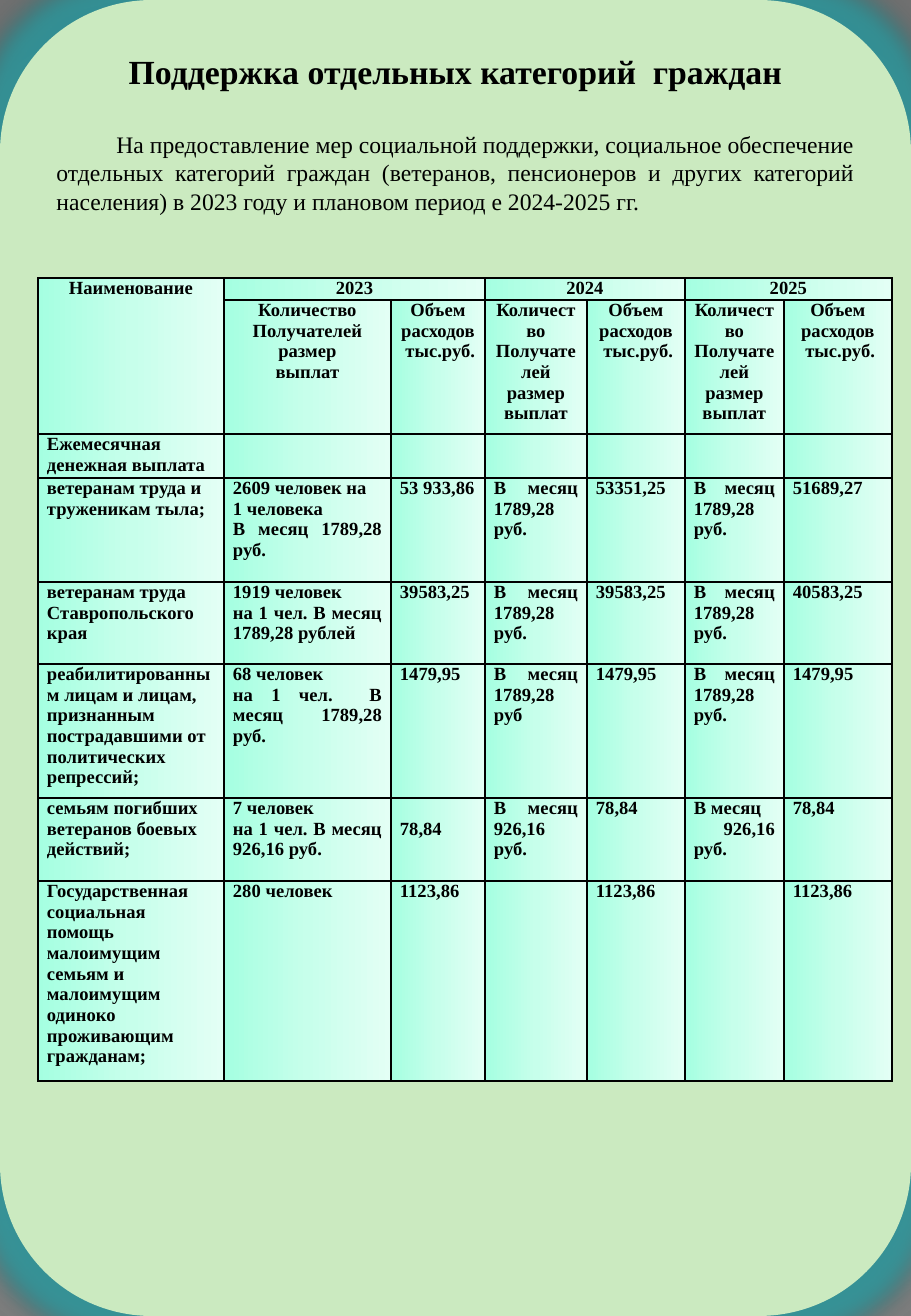
"""Build the slide on support for separate categories of citizens."""
from lxml import etree
from pptx import Presentation, util as u
from pptx.dml.color import RGBColor
from pptx.enum import shapes, text
from pptx.oxml import ns

TITLE = "Поддержка отдельных категорий  граждан"
INTRO = ("На предоставление мер социальной поддержки, социальное обеспечение "
         "отдельных категорий граждан (ветеранов, пенсионеров и других категорий "
         "населения) в 2023 году и плановом период е 2024-2025 гг.")
YEARS = ["2023", "2024", "2025"]
COUNT = "Количество\nПолучателей\nразмер\nвыплат"
VOLUME = "Объем\nрасходов\n тыс.руб."
MONTHLY = "В месяц 1789,28 руб."
BODY = [
    ["Ежемесячная денежная выплата", "", "", "", "", "", ""],
    ["ветеранам труда и труженикам тыла;",
     "2609 человек на\n1 человека\nВ месяц 1789,28 руб.",
     "53 933,86", MONTHLY, "53351,25", MONTHLY, "51689,27"],
    ["ветеранам труда Ставропольского края",
     "1919 человек\nна 1 чел. В месяц 1789,28 рублей",
     "39583,25", MONTHLY, "39583,25", MONTHLY, "40583,25"],
    ["реабилитированным лицам и лицам, признанным пострадавшими от "
     "политических репрессий;",
     "68 человек\nна 1 чел.  В месяц 1789,28 руб.",
     "1479,95", "В месяц 1789,28 руб", "1479,95", MONTHLY, "1479,95"],
    ["семьям погибших ветеранов боевых действий;",
     "7 человек\nна 1 чел. В месяц 926,16 руб.",
     "78,84", "В месяц 926,16 руб.", "78,84", "В месяц\n 926,16 руб.", "78,84"],
    ["Государственная социальная помощь малоимущим семьям и малоимущим "
     "одиноко проживающим гражданам;",
     "280 человек", "1123,86", "", "1123,86", "", "1123,86"],
]
HEAD = [["Наименование"] + [t for year in YEARS for t in (year, "")],
        [""] + [COUNT, VOLUME] * len(YEARS)]
ROWS = HEAD + BODY
COL_W = [186, 167, 94, 102, 98, 99, 108]
ROW_H = [22, 134, 44, 104, 82, 134, 83, 200]
WIDTH, HEIGHT = 911, 1316
TABLE_X, TABLE_Y = 38, 278
LOWERED_CELL, LINE_H = (6, 2), 21
MINT = [(0, "A5FFE1"), (50, "C7FFEB"), (100, "E3FFF5")]
GRAY = [(0, "FFFFFF"), (25, "FFFFFF"), (100, "707070")]
FONT, BLACK = "Times New Roman", "000000"
ALIGN = text.PP_ALIGN


def px(n):
    return u.Emu(round(n * 914400 / 121.5))


def rgb(value):
    return RGBColor.from_string(value)


def add_xml(parent, body):
    """Append a DrawingML fragment to an element."""
    tag, rest = body[1:].split(" ", 1)
    parent.append(etree.fromstring(f'<{tag} xmlns:a="{ns.nsuri("a")}" {rest}'))


def grad_xml(stops, direction):
    """Return a gradient fill with its stops and direction."""
    gs = "".join(f'<a:gs pos="{pos * 1000}"><a:srgbClr val="{c}"/></a:gs>' for pos, c in stops)
    return f'<a:gradFill rotWithShape="1"><a:gsLst>{gs}</a:gsLst>{direction}</a:gradFill>'


def write(p, words, size, bold, align):
    """Fill one paragraph with a formatted run."""
    p.alignment = align
    r = p.add_run()
    r.text = words
    for name, value in {"name": FONT, "size": u.Pt(size), "bold": bold}.items():
        setattr(r.font, name, value)
    r.font.color.rgb = rgb(BLACK)


def add_background(s):
    s.background.fill.gradient()
    bg_pr = s.background.fill._xPr
    old = bg_pr.find(ns.qn("a:gradFill"))
    add_xml(bg_pr, grad_xml(GRAY, '<a:path path="circle"><a:fillToRect l="10000" t="110000" '
                                  'r="10000" b="100000"/></a:path>'))
    bg_pr.replace(old, bg_pr[-1])


def add_panel(s):
    """Draw the rounded panel with the title and the introduction."""
    sp = s.shapes.add_shape(shapes.MSO_SHAPE.ROUNDED_RECTANGLE, 0, 0, px(WIDTH), px(HEIGHT))
    sp.fill.solid()
    sp.fill.fore_color.rgb = rgb("CBEAC0")
    sp.line.fill.background()
    add_xml(sp._element.spPr,
            f'<a:effectLst ><a:glow rad="{u.Pt(28)}"><a:srgbClr val="2F9A9F">'
            f'<a:alpha val="85000"/></a:srgbClr></a:glow>'
            f'<a:outerShdw blurRad="{u.Pt(3.5)}" dist="{u.Pt(2.2)}" dir="5400000">'
            f'<a:srgbClr val="{BLACK}"><a:alpha val="32000"/></a:srgbClr>'
            f'</a:outerShdw></a:effectLst>')
    tf = sp.text_frame
    tf.word_wrap = True
    tf.vertical_anchor = text.MSO_ANCHOR.TOP
    write(tf.paragraphs[0], TITLE, 20, True, ALIGN.CENTER)
    p = tf.add_paragraph()
    p.space_before = u.Pt(23)
    write(p, INTRO, 14, False, ALIGN.JUSTIFY)
    p._p.get_or_add_pPr().set("indent", str(px(60)))


def format_cell(cell, words, align):
    """Write a cell and give it its margins, borders and fill."""
    margins = {"margin_left": 9, "margin_right": 9, "margin_top": 0, "margin_bottom": 0}
    for name, value in margins.items():
        setattr(cell, name, px(value))
    tf = cell.text_frame
    for i, line in enumerate(words.split("\n")):
        p = tf.add_paragraph() if i else tf.paragraphs[0]
        p.font.size = u.Pt(11)
        if line:
            write(p, line, 11, True, align)
    tc_pr = cell._tc.get_or_add_tcPr()
    for side in "LRTB":
        add_xml(tc_pr, f'<a:ln{side} w="{u.Pt(1)}"><a:solidFill><a:srgbClr val="{BLACK}"/>'
                       f'</a:solidFill></a:ln{side}>')
    add_xml(tc_pr, grad_xml(MINT, '<a:lin ang="0" scaled="0"/>'))


def add_payments(s):
    """Draw the table of payments by year."""
    table = s.shapes.add_table(len(ROWS), len(COL_W), px(TABLE_X), px(TABLE_Y),
                               px(sum(COL_W)), px(sum(ROW_H))).table
    table.first_row = table.horz_banding = False
    for col, width in zip(table.columns, COL_W):
        col.width = px(width)
    for row, height in zip(table.rows, ROW_H):
        row.height = px(height)
    for i, row in enumerate(ROWS):
        for j, words in enumerate(row):
            align = ALIGN.CENTER if i < len(HEAD) else ALIGN.JUSTIFY if j else ALIGN.LEFT
            format_cell(table.cell(i, j), words, align)
    table.cell(*LOWERED_CELL).margin_top = px(LINE_H)
    table.cell(0, 0).merge(table.cell(1, 0))
    for j in range(1, len(COL_W), 2):
        table.cell(0, j).merge(table.cell(0, j + 1))


def main():
    prs = Presentation()
    prs.slide_width, prs.slide_height = px(WIDTH), px(HEIGHT)
    s = prs.slides.add_slide(prs.slide_layouts[6])
    add_background(s)
    add_panel(s)
    add_payments(s)
    prs.save("out.pptx")


if __name__ == "__main__":
    main()
